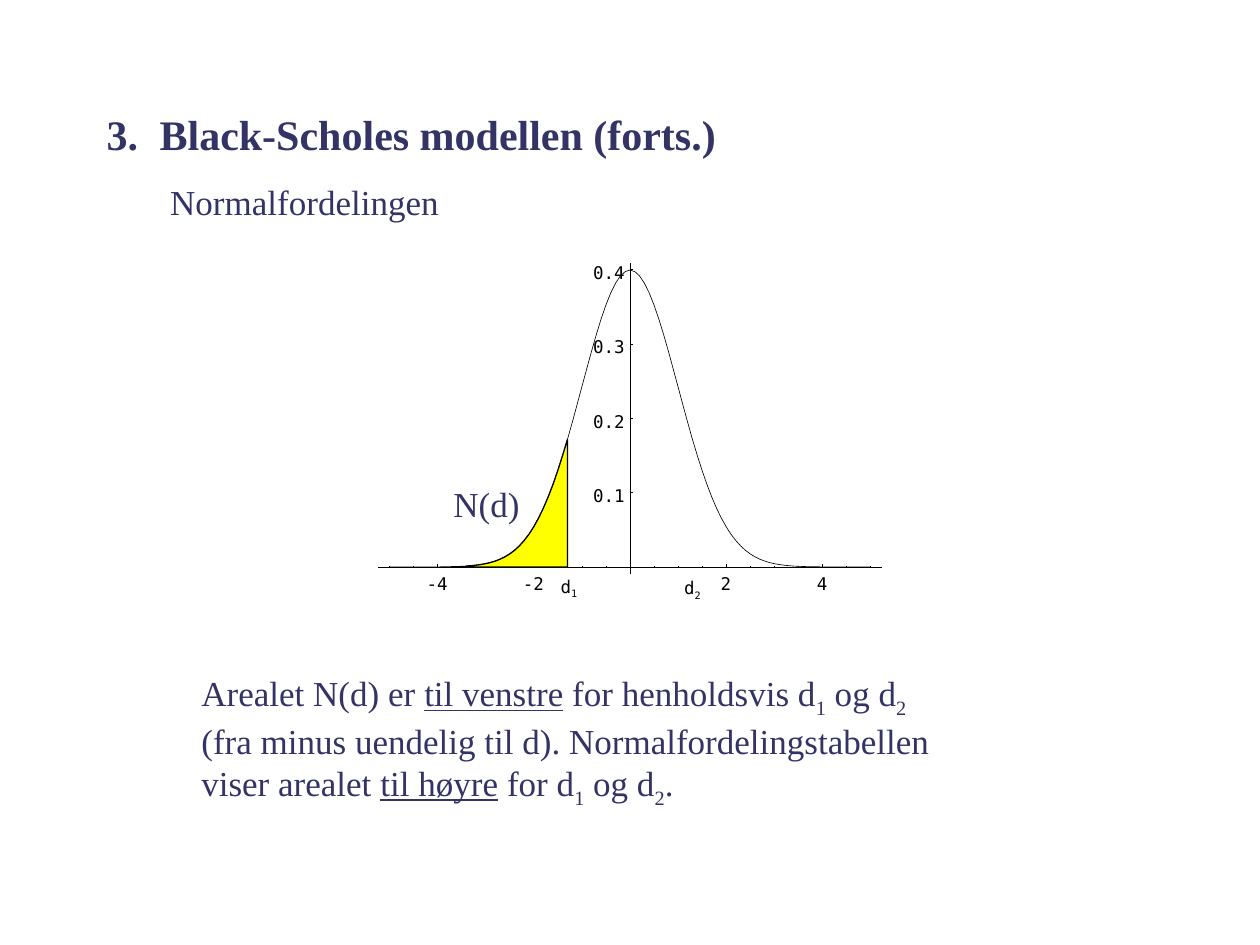
import math

import pptx
import pptx.dml.color
import pptx.enum.shapes
import pptx.enum.text
import pptx.oxml.ns
import pptx.util
from lxml import etree

Cm, Pt = pptx.util.Cm, pptx.util.Pt
COLORS = {"ink": "333366", "axis": "000000", "area": "FFFF00"}
SERIF, MONO = "Times New Roman", "DejaVu Sans Mono"


def write_text(holder, text, left, top, width, height, size=20, font=SERIF, color="ink",
               bold=False, wrap=True, insets=(0.25, 0.13), hanging=0, margin=0, middle=False):
    box = holder.add_textbox(Cm(left), Cm(top), Cm(width), Cm(height))
    frame = box.text_frame
    frame.word_wrap = wrap
    frame.margin_left = frame.margin_right = Cm(insets[0])
    frame.margin_top = frame.margin_bottom = Cm(insets[1])
    if middle:
        frame.vertical_anchor = pptx.enum.text.MSO_ANCHOR.MIDDLE
    paragraph = frame.paragraphs[0]
    properties = paragraph._p.get_or_add_pPr()
    properties.set("marL", str(Cm(margin)))
    properties.set("indent", str(-Cm(hanging)))
    for piece in text.split("|"):
        run = paragraph.add_run()
        run.text = piece.lstrip("_^")
        run.font.size = Pt(size)
        run.font.name = font
        run.font.bold = bold
        run.font.color.rgb = pptx.dml.color.RGBColor.from_string(COLORS[color])
        if piece.startswith("_"):
            run._r.get_or_add_rPr().set("baseline", "-25000")
        elif piece.startswith("^"):
            run.font.underline = True


def draw_line(holder, x1, y1, x2, y2, weight):
    line = holder.add_connector(pptx.enum.shapes.MSO_CONNECTOR.STRAIGHT,
                                Cm(x1), Cm(y1), Cm(x2), Cm(y2))
    line.line.color.rgb = pptx.dml.color.RGBColor.from_string(COLORS["axis"])
    line.line.width = Pt(weight)
    etree.SubElement(line._element.spPr, pptx.oxml.ns.qn("a:effectLst"))


deck = pptx.Presentation()
deck.slide_width, deck.slide_height = Cm(25.4), Cm(19.05)
slide = deck.slides.add_slide(deck.slide_layouts[6])
content = slide.shapes

write_text(content, "Normalfordelingen", 3.18, 3.5, 8.05, 1.09)
write_text(
    content,
    "Arealet N(d) er |^til venstre| for henholdsvis d|_1| og d|_2| (fra minus uendelig til d). "
    "Normalfordelingstabellen viser arealet |^til høyre| for d|_1| og d|_2|.",
    2.54, 13.41, 16.51, 3.63, margin=1.27)

zero_x, base_y = 12.7, 11.43
z_unit, density_unit = 0.97, 15
plot = content.add_group_shape().shapes
tick_label = dict(size=10, font=MONO, color="axis", wrap=False, insets=(0, 0))

for half in range(-10, 11):
    if half == 0:
        continue
    x = zero_x + half / 2 * z_unit
    major = half in (-8, -4, 4, 8)
    draw_line(plot, x, base_y, x, base_y - (0.06 if major else 0.03), 0.25 if major else 0.13)
    if major:
        label = str(half // 2)
        write_text(plot, label, x - 0.11 * len(label), 11.56, 0.2 * (len(label) + 1), 0.39,
                   **tick_label)
draw_line(plot, 7.62, base_y, 17.78, base_y, 0.25)

for step in range(1, 21):
    y = base_y - step * 0.02 * density_unit
    major = step % 5 == 0
    draw_line(plot, zero_x, y, zero_x + (0.06 if major else 0.03), y, 0.25 if major else 0.13)
    if major:
        write_text(plot, f"{step * 0.02:.1f}", 11.96, y - 0.15, 0.81, 0.39, **tick_label)
draw_line(plot, zero_x, 11.58, zero_x, 5.31, 0.25)

for holder, start, end, filled in (
        (plot, -50, -1, False), (plot, -1, 43, False), (plot, 43, 50, False),
        (content, -34, -13, True)):
    outline = []
    for tenth in range(start, end + 1):
        z = tenth / 10
        density = math.exp(-z * z / 2) / math.sqrt(2 * math.pi)
        outline.append((Cm(zero_x + z * z_unit), Cm(base_y - density * density_unit)))
    if filled:
        draw_line(content, outline[-1][0].cm, base_y, 9.09, base_y, 0.75)
        outline += [(outline[-1][0], Cm(base_y)), (outline[0][0], Cm(base_y))]
    builder = holder.build_freeform(*outline[0])
    builder.add_line_segments(outline[1:], close=filled)
    curve = builder.convert_to_shape()
    curve.shadow.inherit = False
    curve.line.color.rgb = pptx.dml.color.RGBColor.from_string(COLORS["axis"])
    curve.line.width = Pt(0.75 if filled else 0.38)
    if filled:
        curve.fill.solid()
        curve.fill.fore_color.rgb = pptx.dml.color.RGBColor.from_string(COLORS["area"])
    else:
        curve.fill.background()

limit_label = dict(size=10, font=MONO, color="axis", wrap=False)
write_text(content, "d|_1", 11.05, 11.48, 0.86, 0.69, **limit_label)
write_text(content, "N(d)", 8.89, 9.6, 1.85, 1.09, wrap=False)
write_text(content, "d|_2", 13.54, 11.51, 0.86, 0.69, **limit_label)
write_text(content, "3.\tBlack-Scholes modellen (forts.)", 1.9, 1.52, 22.66, 2.34,
           size=24, bold=True, margin=1.07, hanging=1.07, middle=True)

deck.save("out.pptx")
